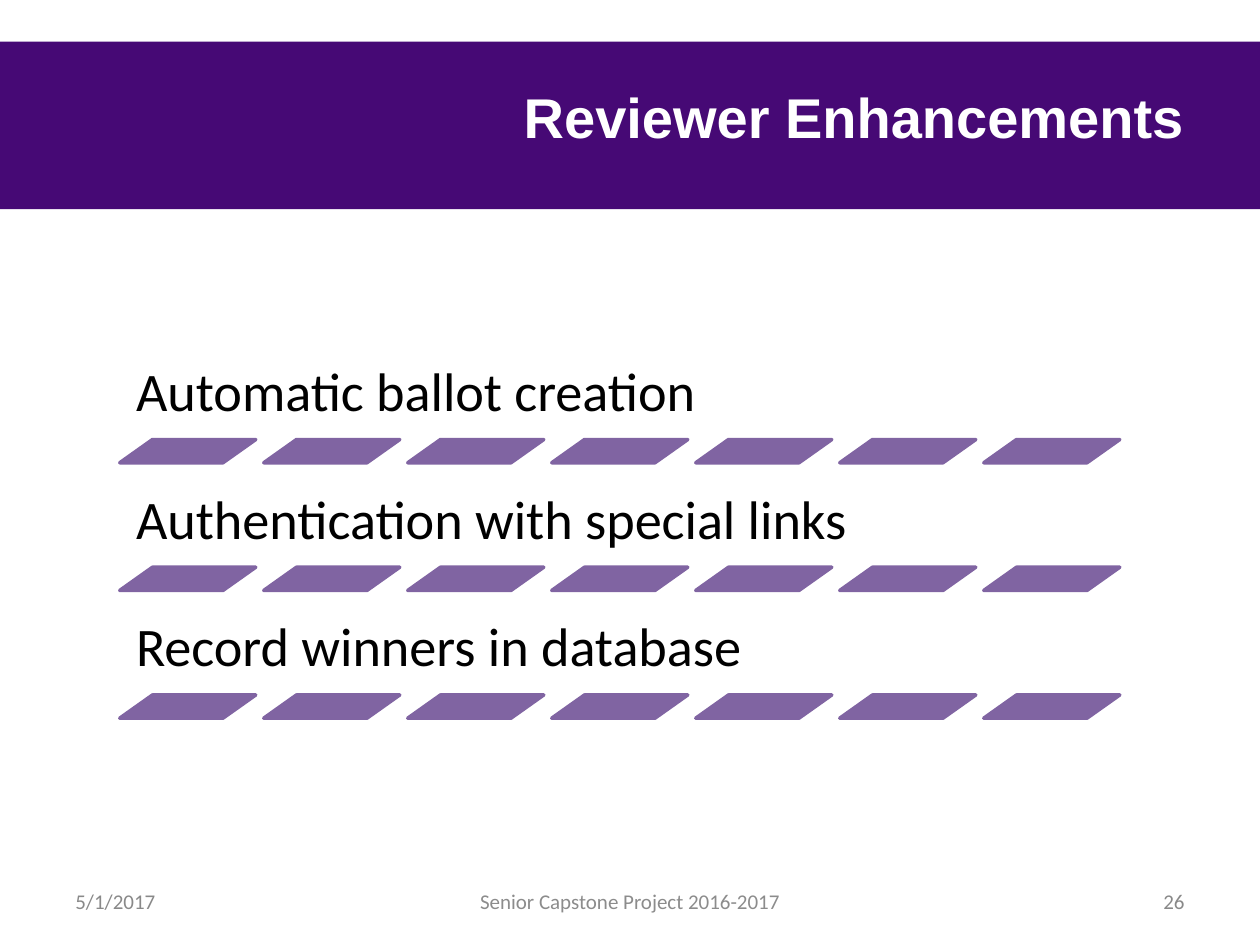
from pptx import Presentation
from pptx.dml.color import RGBColor
from pptx.enum.shapes import MSO_SHAPE
from pptx.enum.text import MSO_ANCHOR, PP_ALIGN
from pptx.util import Inches, Pt

PURPLE, VIOLET, GREY = "460975", "8064A2", "898989"
ITEMS = ["Automatic ballot creation", "Authentication with special links",
         "Record winners in database"]
DASHES = 7


def rgb(value):
    return RGBColor.from_string(value)


def place(sp, box):
    sp.left, sp.top, sp.width, sp.height = [Inches(v) for v in box]


def write(sp, text, size, color, font="Calibri", align=PP_ALIGN.LEFT,
          anchor=MSO_ANCHOR.MIDDLE, bold=False):
    """Fill the shape's text frame with one formatted paragraph and return it."""
    tf = sp.text_frame
    tf.word_wrap = True
    tf.vertical_anchor = anchor
    p = tf.paragraphs[0]
    p.alignment = align
    r = p.add_run()
    r.text = text
    r.font.name, r.font.size, r.font.bold = font, Pt(size), bold
    r.font.color.rgb = rgb(color)
    return p


def add_filled(shapes, kind, box, color):
    sp = shapes.add_shape(kind, *[Inches(v) for v in box])
    sp.shadow.inherit = False
    sp.fill.solid()
    sp.fill.fore_color.rgb = rgb(color)
    return sp


def add_header(s, band_box, title_box, text):
    band = add_filled(s.shapes, MSO_SHAPE.RECTANGLE, band_box, PURPLE)
    band.line.fill.background()
    title = s.shapes.title
    title.element.addprevious(band.element)
    place(title, title_box)
    write(title, text, 32, "FFFFFF", "Arial", PP_ALIGN.RIGHT, bold=True)


def add_item(shapes, box, text):
    """One line of text above a row of slanted dashes."""
    x, y, w, h = box
    text_h, dash_h = h * 0.8, h * 0.2
    sp = shapes.add_textbox(*[Inches(v) for v in (x, y, w, text_h)])
    tf = sp.text_frame
    tf.margin_left = tf.margin_right = Inches(0.13)
    tf.margin_top = tf.margin_bottom = Inches(0.13)
    p = write(sp, text, 31, "000000", anchor=MSO_ANCHOR.BOTTOM)
    p.line_spacing = 0.9
    pitch = w * 0.1411
    for i in range(DASHES):
        dash = add_filled(shapes, MSO_SHAPE.PARALLELOGRAM,
                          (x + i * pitch, y + text_h, w * 2 / 15, dash_h), VIOLET)
        dash.adjustments[0] = 1.41
        dash.line.color.rgb = rgb(VIOLET)
        dash.line.width = Pt(2)


def add_list(s, box, items):
    x, y, w, h = box
    group = s.shapes.add_group_shape()
    pitch = h / (len(items) - 0.09)
    for i, text in enumerate(items):
        add_item(group.shapes, (x, y + i * pitch, w, pitch * 0.91), text)


def add_footer(s, box, date, label, number):
    x, y, w, h = box
    side, middle = w * 0.26, w * 0.35
    parts = [(x, side, date, PP_ALIGN.LEFT, GREY),
             (x + (w - middle) / 2, middle, label, PP_ALIGN.CENTER, "8C8C8C"),
             (x + w - side, side, number, PP_ALIGN.RIGHT, GREY)]
    for left, width, text, align, color in parts:
        sp = s.shapes.add_textbox(*[Inches(v) for v in (left, y, width, h)])
        write(sp, text, 12, color, align=align)


def main():
    prs = Presentation()
    prs.slide_width, prs.slide_height = Inches(10), Inches(7.5)
    s = prs.slides.add_slide(prs.slide_layouts[5])
    add_header(s, (-0.25, 0.33, 10.5, 1.33), (2.5, 0.3, 7, 1.25),
               "Reviewer Enhancements")
    add_list(s, (0.95, 2.75, 8.1, 2.95), ITEMS)
    add_footer(s, (0.5, 6.95, 9, 0.4), "5/1/2017",
               "Senior Capstone Project 2016-2017", "26")
    prs.save("out.pptx")


if __name__ == "__main__":
    main()
